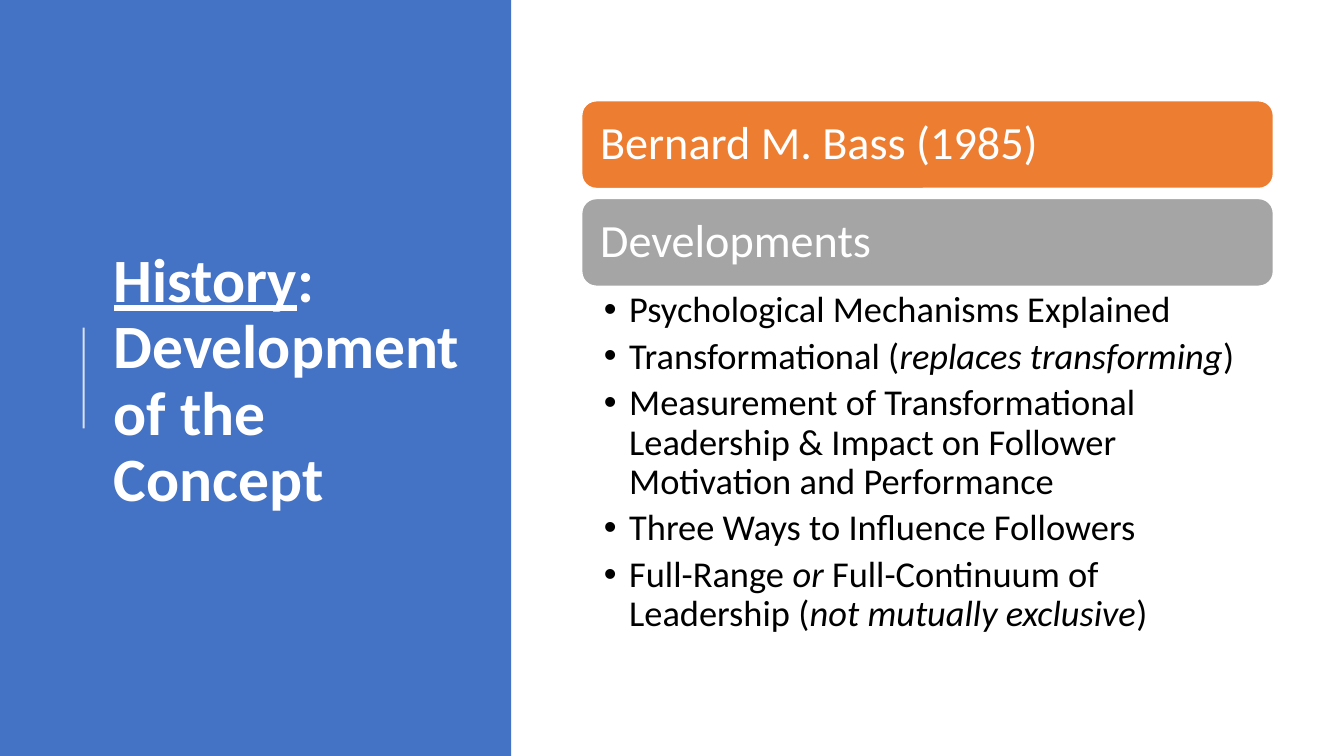
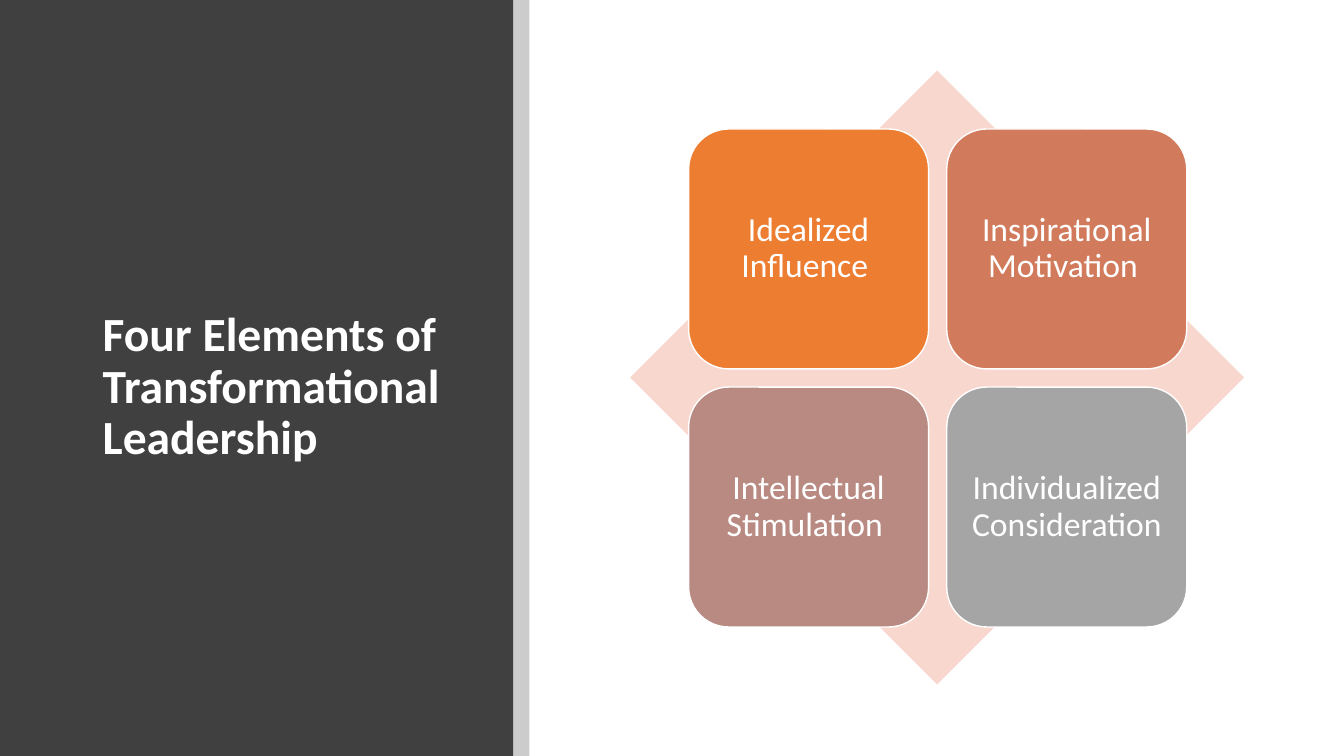
import lxml.etree
import pptx
import pptx.dml.color
import pptx.enum.shapes
import pptx.enum.text
import pptx.oxml.ns
import pptx.util

Inches = pptx.util.Inches
Pt = pptx.util.Pt
SHAPE = pptx.enum.shapes.MSO_SHAPE
ALIGN = pptx.enum.text.PP_ALIGN
ANCHOR = pptx.enum.text.MSO_ANCHOR
qn = pptx.oxml.ns.qn

COLORS = {
    "white": "FFFFFF", "black": "000000", "blue": "4472C4",
    "charcoal": "404040", "orange": "ED7D31", "gray": "A5A5A5",
    "terracotta": "D17B5C", "rose": "B98A82", "blush": "F8D7CE",
}
FONT = "Calibri"
HEIGHT = 7.5


def apply_format(target, values):
    for name, value in values.items():
        setattr(target, name, value)


class Deck:
    """Holds the shared style and the slide being built."""

    def __init__(self):
        self.presentation = pptx.Presentation()
        apply_format(self.presentation, {
            "slide_width": Inches(13.33), "slide_height": Inches(HEIGHT)})
        self.slide = None

    def new_slide(self):
        self.slide = self.presentation.slides.add_slide(
            self.presentation.slide_layouts[6])

    def paint(self, fill, color, opacity=None):
        """Sets a solid fill's colour and, if given, its opacity in percent."""
        fill.solid()
        fill.fore_color.rgb = pptx.dml.color.RGBColor.from_string(COLORS[color])
        if opacity is not None:
            element = fill._xPr.find(".//" + qn("a:srgbClr"))
            lxml.etree.SubElement(element, qn("a:alpha"), val=str(opacity * 1000))

    def shape(self, kind, left, top, width, height, color, outlined=False, opacity=None):
        shape = self.slide.shapes.add_shape(
            kind, Inches(left), Inches(top), Inches(width), Inches(height))
        shape.shadow.inherit = False
        self.paint(shape.fill, color, opacity)
        if outlined:
            self.paint(shape.line.fill, "white")
            shape.line.width = Pt(1)
        else:
            shape.line.fill.background()
        return shape

    def band(self, left, width, color, opacity=None):
        self.shape(SHAPE.RECTANGLE, left, 0, width, HEIGHT, color, opacity=opacity)

    def text_box(self, left, top, width, height):
        return self.slide.shapes.add_textbox(
            Inches(left), Inches(top), Inches(width), Inches(height))

    def frame(self, shape, margins, anchor=ANCHOR.MIDDLE):
        left, top, right, bottom = (Inches(margin) for margin in margins)
        apply_format(shape.text_frame, {
            "word_wrap": True, "vertical_anchor": anchor,
            "margin_left": left, "margin_top": top,
            "margin_right": right, "margin_bottom": bottom})
        return shape.text_frame

    def add_text(self, paragraph, runs, size, color="white", align=ALIGN.LEFT, **font):
        """Each run is a string or a pair of a string and its own font values."""
        apply_format(paragraph, {"alignment": align, "line_spacing": 0.9})
        for item in runs:
            text, own = (item, {}) if isinstance(item, str) else item
            run = paragraph.add_run()
            run.text = text
            apply_format(run.font, {"name": FONT, "size": Pt(size), **font, **own})
            run.font.color.rgb = pptx.dml.color.RGBColor.from_string(COLORS[color])

    def title(self, box, runs, size):
        frame = self.frame(self.text_box(*box), (0.1, 0.05, 0.1, 0.05))
        self.add_text(frame.paragraphs[0], runs, size, bold=True)

    def card(self, box, color, text, size, margin, align=ALIGN.LEFT):
        shape = self.shape(SHAPE.ROUNDED_RECTANGLE, *box, color, outlined=True)
        frame = self.frame(shape, [margin] * 4)
        self.add_text(frame.paragraphs[0], [text], size, align=align)

    def bullets(self, box, items, size):
        frame = self.frame(self.text_box(*box), (0.22, 0.05, 0.26, 0.05), ANCHOR.TOP)
        for index, runs in enumerate(items):
            paragraph = frame.add_paragraph() if index else frame.paragraphs[0]
            self.add_text(paragraph, runs, size, "black")
            paragraph.space_after = Pt(size * 0.2)
            properties = paragraph._p.get_or_add_pPr()
            properties.set("marL", str(Inches(0.25)))
            properties.set("indent", str(-Inches(0.25)))
            lxml.etree.SubElement(properties, qn("a:buFont"), typeface="Arial")
            lxml.etree.SubElement(properties, qn("a:buChar"), char="•")

    def line(self, start, end, color, width, opacity):
        connector = self.slide.shapes.add_connector(
            pptx.enum.shapes.MSO_CONNECTOR.STRAIGHT,
            *(Inches(value) for value in (*start, *end)))
        connector.line.width = Pt(width)
        self.paint(connector.line.fill, color, opacity)
        lxml.etree.SubElement(connector._element.spPr, qn("a:effectLst"))


def build_history(deck):
    italic = {"italic": True}
    deck.new_slide()

    # Title panel
    deck.band(0, 5.07, "blue")
    deck.title((1.03, 0.78, 3.69, 6.02),
               [("History", {"underline": True}), ": Development of the Concept"], 44)
    deck.line((0.83, 4.25), (0.83, 3.25), "white", 1.5, 80)

    # Headings
    left, top, width, height, pitch = 5.77, 1, 6.86, 0.87, 0.97
    headings = [("Bernard M. Bass (1985)", "orange"), ("Developments", "gray")]
    for row, (text, color) in enumerate(headings):
        deck.card((left, top + row * pitch, width, height), color, text, 33, 0.14)

    # Developments list
    deck.bullets((left, top + pitch + height, width, 3.66), [
        ["Psychological Mechanisms Explained"],
        ["Transformational (", ("replaces transforming", italic), ")"],
        ["Measurement of Transformational Leadership & Impact on Follower "
         "Motivation and Performance"],
        ["Three Ways to Influence Followers"],
        ["Full-Range ", ("or ", italic), "Full-Continuum of Leadership (",
         ("not mutually exclusive", italic), ")"],
    ], 26)


def build_elements(deck):
    deck.new_slide()

    # Title panel
    deck.band(0, 5.09, "charcoal")
    deck.title((0.92, 0.89, 3.65, 5.91),
               ["Four Elements of Transformational Leadership"], 34)
    deck.band(5.09, 0.16, "black", opacity=20)

    # Diamond with a two-by-two grid of elements
    deck.shape(SHAPE.DIAMOND, 6.25, 0.7, 6.09, 6.09, "blush")
    left, top, side, pitch = 6.83, 1.28, 2.38, 2.56
    elements = [
        ("Idealized Influence ", "orange"),
        ("Inspirational Motivation ", "terracotta"),
        ("Intellectual Stimulation ", "rose"),
        ("Individualized Consideration ", "gray"),
    ]
    for index, (text, color) in enumerate(elements):
        row, column = divmod(index, 2)
        deck.card((left + column * pitch, top + row * pitch, side, side),
                  color, text, 24, 0.1, ALIGN.CENTER)


def main():
    deck = Deck()
    build_history(deck)
    build_elements(deck)
    deck.presentation.save("out.pptx")


if __name__ == "__main__":
    main()
